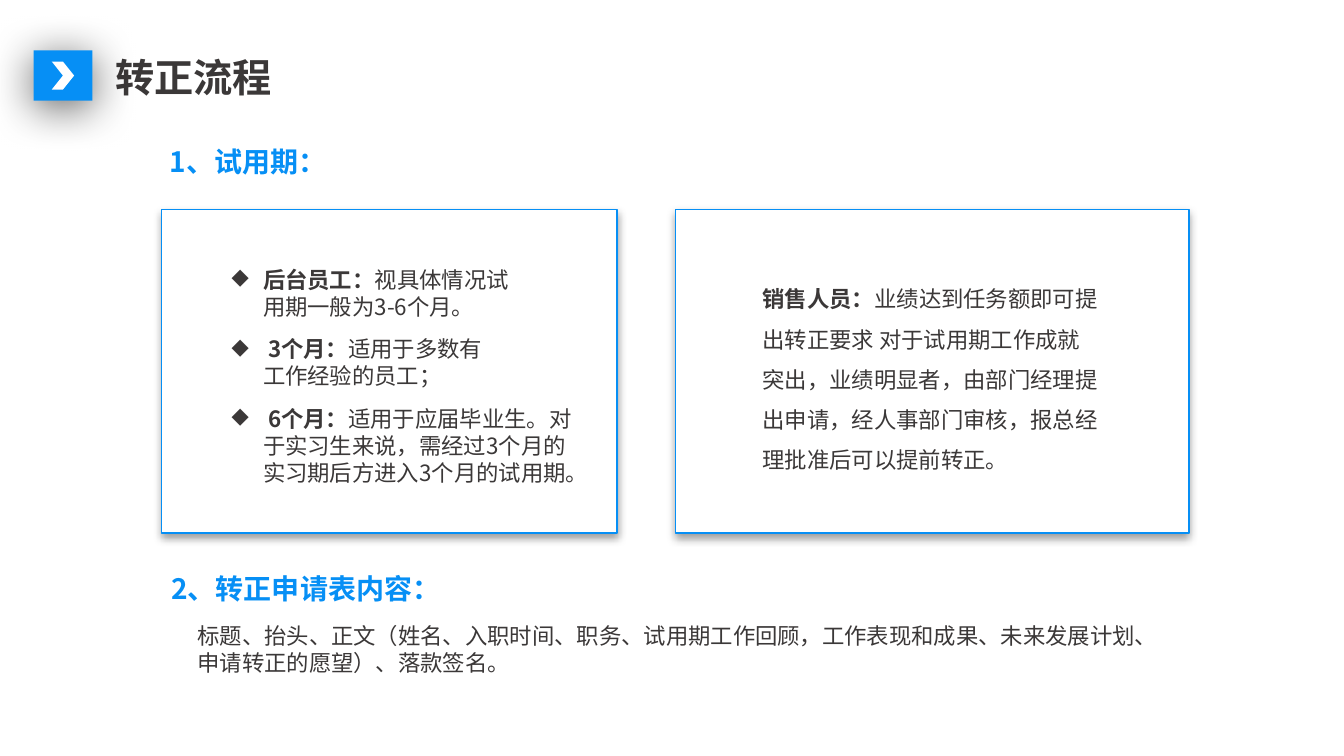
from lxml import etree
from pptx import Presentation, util as u
from pptx.dml.color import RGBColor
from pptx.enum import shapes, text
from pptx.oxml import ns

BLUE = RGBColor(0x06, 0x8F, 0xF5)
WHITE = RGBColor(0xFF, 0xFF, 0xFF)
DARK = RGBColor(0x3B, 0x38, 0x38)
FONT = "Noto Sans CJK SC"

BULLETS = [
    ("后台员工：", "视具体情况试用期一般为3-6个月。", 225.5),
    (" 3个月：", "适用于多数有工作经验的员工；", 206.5),
    (" 6个月：", "适用于应届毕业生。对于实习生来说，需经过3个月的实习期后方进入3个月的试用期。", 261.5),
]


def add_shadow(shape, blur, distance, opacity):
    """Give the shape a black outer shadow that falls straight down."""
    effects = etree.SubElement(shape._element.spPr, ns.qn("a:effectLst"))
    shadow = etree.SubElement(
        effects, ns.qn("a:outerShdw"), blurRad=str(u.Pt(blur)),
        dist=str(u.Pt(distance)), dir="5400000", algn="t", rotWithShape="0")
    color = etree.SubElement(shadow, ns.qn("a:srgbClr"), val="000000")
    etree.SubElement(color, ns.qn("a:alpha"), val=str(opacity * 1000))


def write(box, content, *, lead="", size=16, color=DARK, bold=False,
          wrap=True, spacing=1.0, bullet=None):
    """Fill a text box with one paragraph: a bold lead, then the content."""
    frame = box.text_frame
    frame.word_wrap = wrap
    frame.auto_size = text.MSO_AUTO_SIZE.SHAPE_TO_FIT_TEXT
    frame.vertical_anchor = text.MSO_ANCHOR.TOP
    para = frame.paragraphs[0]
    para.alignment = text.PP_ALIGN.LEFT
    para.line_spacing = spacing
    para.space_before = u.Pt(0)
    for words, is_bold in ((lead, True), (content, bold)):
        if not words:
            continue
        span = para.add_run()
        span.text = words
        span.font.size = u.Pt(size)
        span.font.bold = is_bold
        span.font.name = FONT
        span.font.color.rgb = color
        etree.SubElement(span._r.get_or_add_rPr(), ns.qn("a:ea"), typeface=FONT)
    if bullet:
        props = para._p.get_or_add_pPr()
        props.set("marL", str(u.Pt(22.5)))
        props.set("indent", str(-u.Pt(22.5)))
        etree.SubElement(props, ns.qn("a:buChar"), char=bullet)


def add_text(page, left, top, width, height, content, **style):
    box = page.shapes.add_textbox(*map(u.Pt, (left, top, width, height)))
    write(box, content, **style)


def add_block(page, kind, left, top, width, height, fill):
    block = page.shapes.add_shape(kind, *map(u.Pt, (left, top, width, height)))
    block.shadow.inherit = False
    block.fill.solid()
    block.fill.fore_color.rgb = fill
    block.line.fill.background()
    return block


def add_header(page, left, top, width, height):
    badge = add_block(page, shapes.MSO_SHAPE.RECTANGLE, left, top, 42, height, BLUE)
    badge._element.spPr.remove(badge._element.spPr.find(ns.qn("a:effectLst")))
    add_shadow(badge, 32, 5, 62)
    add_block(page, shapes.MSO_SHAPE.CHEVRON, left + 13, top + 8, 16, 20, WHITE)
    title = page.shapes.title
    title.left, title.top = u.Pt(left + 51), u.Pt(top + 2)
    title.width, title.height = u.Pt(width - 51), u.Pt(38)
    write(title, "转正流程", size=28, bold=True, wrap=False, spacing=0.9)


def add_heading(page, left, top, width, content):
    add_text(page, left, top, width, 31.5, content,
             size=20, color=BLUE, bold=True, wrap=False)


def add_card(page, left, top, width, height):
    outline = page.shapes.build_freeform(u.Pt(left), u.Pt(top))
    outline.add_line_segments([
        (u.Pt(left + width), u.Pt(top)),
        (u.Pt(left + width), u.Pt(top + height)),
        (u.Pt(left), u.Pt(top + height))])
    card = outline.convert_to_shape()
    card.fill.solid()
    card.fill.fore_color.rgb = WHITE
    card.line.color.rgb = BLUE
    card.line.width = u.Pt(1)
    add_shadow(card, 6, 3, 39)


def add_staff_card(page, left, top, width, height):
    add_card(page, left, top, width, height)
    for row, (lead, content, text_width) in enumerate(BULLETS):
        add_text(page, left + 43, top + 36.7 + row * 49.6, text_width, 46,
                 content, lead=lead, bullet="◆")


def add_sales_card(page, left, top, width, height):
    add_card(page, left, top, width, height)
    add_text(page, left + 55, top + 41, 257, 152.5,
             "业绩达到任务额即可提出转正要求 对于试用期工作成就突出，业绩明显者，"
             "由部门经理提出申请，经人事部门审核，报总经理批准后可以提前转正。",
             lead="销售人员：", spacing=1.5)


def add_application(page, left, top, width):
    add_heading(page, left, top, 208, "2、转正申请表内容：")
    add_text(page, left + 18.7, top + 36, width - 18.7, 46,
             "标题、抬头、正文（姓名、入职时间、职务、试用期工作回顾，"
             "工作表现和成果、未来发展计划、申请转正的愿望）、落款签名。")


def main():
    deck = Presentation()
    deck.slide_width, deck.slide_height = u.Pt(960), u.Pt(540)
    page = deck.slides.add_slide(deck.slide_layouts[5])
    add_header(page, 24, 36, 178.5, 36)
    add_heading(page, 109.5, 100, 134, " 1、试用期：")
    add_staff_card(page, 115.3, 149.8, 325.5, 231)
    add_sales_card(page, 482.7, 149.8, 366.5, 231)
    add_application(page, 115.3, 404.7, 711.5)
    deck.save("out.pptx")


if __name__ == "__main__":
    main()
